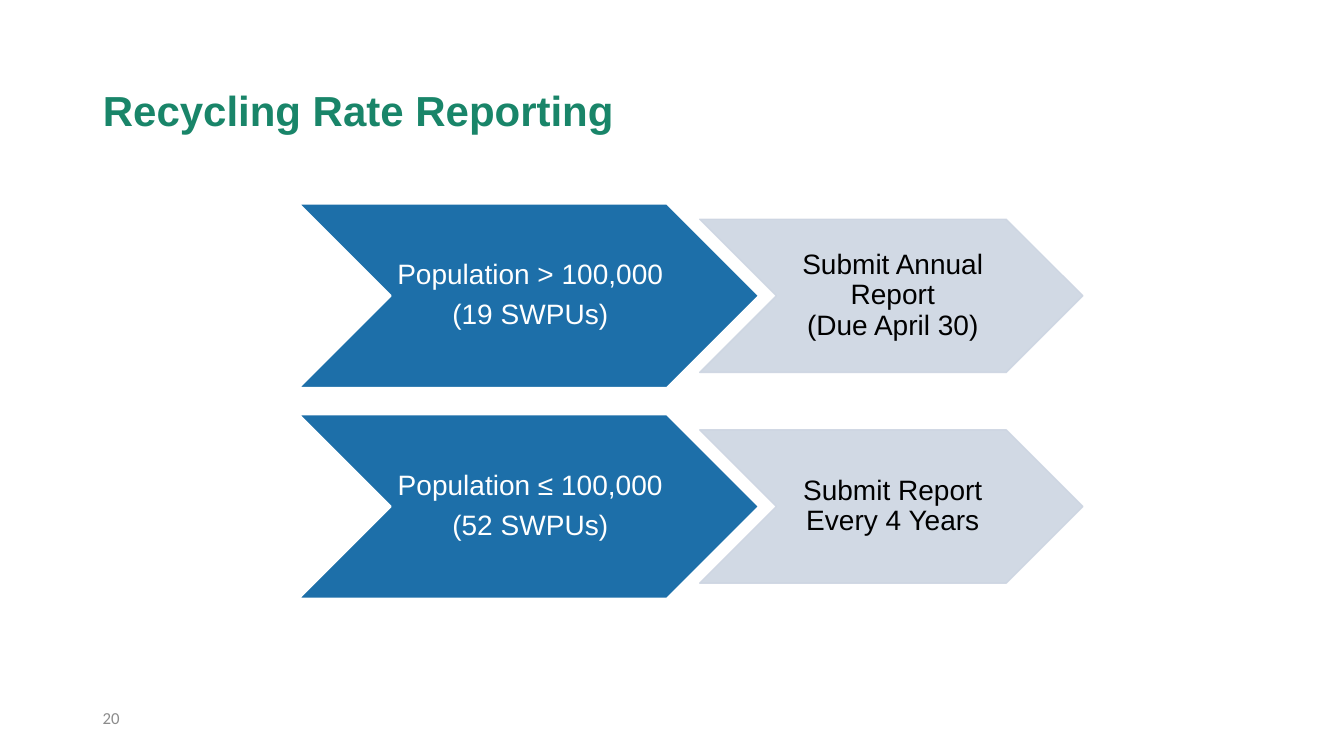
from lxml import etree
from pptx import Presentation
from pptx.dml.color import RGBColor
from pptx.enum import shapes, text
from pptx.oxml import ns
from pptx.util import Inches, Pt

TITLE = "Recycling Rate Reporting"
PAGE = "20"
ROWS = [
    (["Population > 100,000", "(19 SWPUs)"], ["Submit Annual Report\v(Due April 30)"]),
    (["Population ≤ 100,000", "(52 SWPUs)"], ["Submit Report Every 4 Years"]),
]

GREEN = RGBColor(0x19, 0x85, 0x69)
BLUE = RGBColor(0x1D, 0x6F, 0xA9)
PALE = RGBColor(0xCD, 0xD5, 0xE2)
GREY = RGBColor(0x8C, 0x8C, 0x8C)
WHITE = RGBColor(0xFF, 0xFF, 0xFF)
BLACK = RGBColor(0, 0, 0)

ROW_TOP, ROW_STEP = 2.02, 2.09
GROUP_H, ACTION_H = 1.83, 1.52


def style(p, size, color, name="Arial", bold=False):
    for r in p.runs:
        f = r.font
        f.size, f.name, f.bold = Pt(size), name, bold
        f.color.rgb = color


def add_chevron(s, box, lines, fill, line, width, color, alpha=None):
    sp = s.shapes.add_shape(shapes.MSO_SHAPE.CHEVRON, *map(Inches, box))
    sp.shadow.inherit = False
    sp.fill.solid()
    sp.fill.fore_color.rgb = fill
    sp.line.color.rgb = line
    sp.line.width = Pt(width)
    if alpha:
        for clr in sp._element.spPr.iter(ns.qn("a:srgbClr")):
            etree.SubElement(clr, ns.qn("a:alpha"), val=str(alpha * 1000))
    tf = sp.text_frame
    tf.word_wrap = True
    tf.vertical_anchor = text.MSO_ANCHOR.MIDDLE
    tf.margin_left, tf.margin_right = Inches(0.03), 0
    tf.margin_top = tf.margin_bottom = Inches(0.01)
    tf.text = "\n".join(lines)
    for i, p in enumerate(tf.paragraphs):
        p.alignment = text.PP_ALIGN.CENTER
        p.line_spacing = 0.9
        p.space_before = Pt(7 if i else 0)
        style(p, 20, color)


def main():
    """Build the recycling rate reporting slide."""
    prs = Presentation()
    prs.slide_width, prs.slide_height = Inches(13.33), Inches(7.5)
    s = prs.slides.add_slide(prs.slide_layouts[5])

    title = s.shapes.title
    title.left, title.top = Inches(0.92), Inches(0.4)
    title.width, title.height = Inches(11.5), Inches(1.45)
    title.text_frame.text = TITLE
    title.text_frame.vertical_anchor = text.MSO_ANCHOR.MIDDLE
    p = title.text_frame.paragraphs[0]
    p.alignment = text.PP_ALIGN.LEFT
    p.line_spacing = 0.9
    style(p, 30, GREEN, bold=True)

    for i, (group, action) in enumerate(ROWS):
        top = ROW_TOP + i * ROW_STEP
        action_top = top + (GROUP_H - ACTION_H) / 2
        add_chevron(s, (2.96, top, 4.57, GROUP_H), group, BLUE, WHITE, 1.5, WHITE)
        add_chevron(s, (6.94, action_top, 3.8, ACTION_H), action, PALE, PALE, 1, BLACK, 90)

    page = s.shapes.add_textbox(Inches(0.92), Inches(6.9), Inches(11.5), Inches(0.45))
    tf = page.text_frame
    tf.word_wrap = True
    tf.vertical_anchor = text.MSO_ANCHOR.MIDDLE
    tf.text = PAGE
    style(tf.paragraphs[0], 12, GREY, "Calibri")

    prs.save("out.pptx")


if __name__ == "__main__":
    main()
